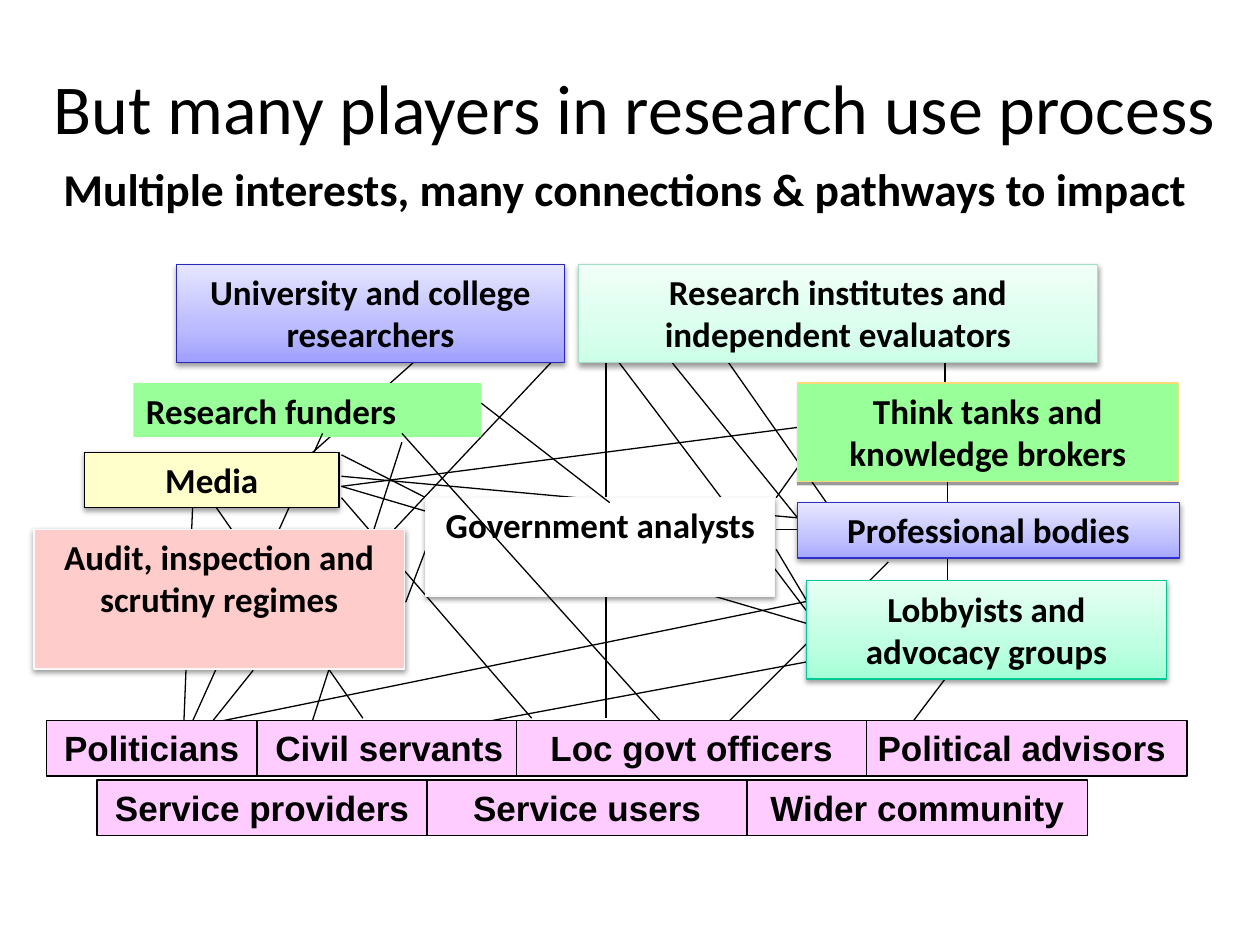
from lxml.etree import SubElement
from pptx import Presentation
from pptx.dml.color import RGBColor
from pptx.enum.shapes import MSO_CONNECTOR, MSO_SHAPE
from pptx.enum.text import MSO_ANCHOR, PP_ALIGN
from pptx.oxml import parse_xml
from pptx.oxml.ns import nsdecls, qn
from pptx.util import Pt

PX = 9144  # 100 px to the inch
SOFT, HARD = (38, 3.1, 1.6), (40, 0, 2)  # shadow opacity, blur, distance
LEFT, CENTER = PP_ALIGN.LEFT, PP_ALIGN.CENTER


def rgb(value):
    return RGBColor.from_string(value)


def write(sp, text, size, font="Calibri", bold=True, align=CENTER, anchor=MSO_ANCHOR.TOP):
    tf = sp.text_frame
    tf.word_wrap = True
    tf.vertical_anchor = anchor
    p = tf.paragraphs[0]
    p.alignment = align
    r = p.add_run()
    r.text = text
    for name, value in {"size": Pt(size), "name": font, "bold": bold}.items():
        setattr(r.font, name, value)
    r.font.color.rgb = rgb("000000")


prs = Presentation()
prs.slide_width, prs.slide_height = 1000 * PX, 750 * PX
s = prs.slides.add_slide(prs.slide_layouts[6])

# Title and subtitle
for text, box, size, bold, anchor in [
    ("But many players in research use process", (27, 36, 953, 87), 40, False, MSO_ANCHOR.BOTTOM),
    ("Multiple interests, many connections & pathways to impact", (20, 123, 953, 53), 26, True,
     MSO_ANCHOR.TOP),
]:
    write(s.shapes.add_textbox(*[v * PX for v in box]), text, size, bold=bold, anchor=anchor)

# Connections that pass behind the players: x1, y1, x2, y2
back_lines = [
    (750, 539, 725, 572), (153, 399, 146, 572), (169, 399, 288, 570), (752, 367, 752, 406),
    (752, 438, 752, 461), (271, 395, 422, 570), (271, 361, 338, 395), (658, 336, 616, 395),
    (330, 286, 246, 361), (481, 286, 481, 395), (322, 478, 338, 436), (481, 436, 481, 570),
    (750, 286, 750, 328), (633, 420, 616, 420), (616, 436, 641, 478), (271, 386, 641, 495),
    (271, 386, 658, 336), (577, 286, 656, 399), (532, 286, 633, 411), (490, 286, 641, 486),
    (439, 286, 313, 420), (271, 378, 633, 411),
]

# Players: text, box, fill (a list is a gradient from the bottom up), line, shadow
back_players = [
    ("Professional bodies", (633, 399, 303, 44), ["A7A7FF", "C1C1FF", "E7E7FF"], "2E2ECB", SOFT),
    ("Government analysts", (338, 395, 277, 78), "FFFFFF", "F9F9F9", SOFT),
    ("University and college researchers", (140, 210, 308, 78),
     ["9F9FFF", "BBBBFF", "E5E5FF"], "2929B8", SOFT),
    ("Research institutes and independent evaluators", (459, 210, 412, 78),
     ["CCFFE8", "DAFFEE", "F1FFF8"], "A5DEC6", SOFT),
    ("Think tanks and knowledge brokers", (633, 304, 302, 78), "99FF99", "FADA7A", HARD),
    ("Research funders", (106, 304, 276, 43), "99FF99", None, None),
]

# Connections that pass over the first players
front_lines = [
    (382, 320, 484, 399), (319, 344, 524, 572), (319, 351, 248, 572), (256, 344, 153, 572),
    (201, 532, 169, 572), (642, 477, 177, 572), (642, 525, 390, 572), (705, 446, 579, 572),
]
front_players = [
    ("Audit, inspection and scrutiny regimes", (27, 420, 294, 111), "FFCCCC", "F9F9F9", SOFT),
    ("Media", (67, 359, 202, 44), "FFFFCC", "000000", SOFT),
    ("Lobbyists and advocacy groups", (640, 461, 286, 78),
     ["A5FFD6", "BFFFE2", "E7FFF3"], "00C896", SOFT),
]

# Research users in two rows: text, left, top, width
users = [
    ("Politicians", 37, 572, 167), ("Civil servants", 204, 572, 210),
    ("Political advisors", 680, 572, 262), ("Loc govt officers", 410, 572, 278),
    ("Service providers", 77, 619, 262), ("Service users", 339, 619, 254),
    ("Wider community", 593, 619, 270),
]
user_boxes = [(text, (x, y, w, 44), "FFCCFF", "000000", None) for text, x, y, w in users]

# Draw each layer: lines first, then the boxes above them
for lines, boxes, font in [
    (back_lines, back_players, "Calibri"),
    (front_lines, front_players, "Calibri"),
    ([], user_boxes, "Arial"),
]:
    for ends in lines:
        c = s.shapes.add_connector(MSO_CONNECTOR.STRAIGHT, *[v * PX for v in ends])
        c.line.color.rgb = rgb("000000")
        c.line.width = Pt(0.75)
        SubElement(c._element.spPr, qn("a:effectLst"))

    for text, box, fill, line, shadow in boxes:
        sp = s.shapes.add_shape(MSO_SHAPE.RECTANGLE, *[v * PX for v in box])
        spPr = sp._element.spPr
        if isinstance(fill, list):
            stops = "".join(
                f'<a:gs pos="{pos}"><a:srgbClr val="{color}"/></a:gs>'
                for pos, color in zip((0, 35000, 100000), fill)
            )
            spPr.insert(2, parse_xml(
                f'<a:gradFill {nsdecls("a")} rotWithShape="1"><a:gsLst>{stops}</a:gsLst>'
                '<a:lin ang="16200000" scaled="0"/></a:gradFill>'
            ))
        else:
            sp.fill.solid()
            sp.fill.fore_color.rgb = rgb(fill)
        if line:
            sp.line.color.rgb = rgb(line)
            sp.line.width = Pt(0.75)
        else:
            sp.line.fill.background()
        sp.shadow.inherit = False
        if shadow:
            alpha, blur, dist = shadow
            spPr.find(qn("a:effectLst")).append(parse_xml(
                f'<a:outerShdw {nsdecls("a")} blurRad="{Pt(blur)}" dist="{Pt(dist)}" '
                'dir="5400000" rotWithShape="0"><a:srgbClr val="000000">'
                f'<a:alpha val="{alpha * 1000}"/></a:srgbClr></a:outerShdw>'
            ))
        write(sp, text, 20, font, align=CENTER if line else LEFT)

prs.save("out.pptx")
